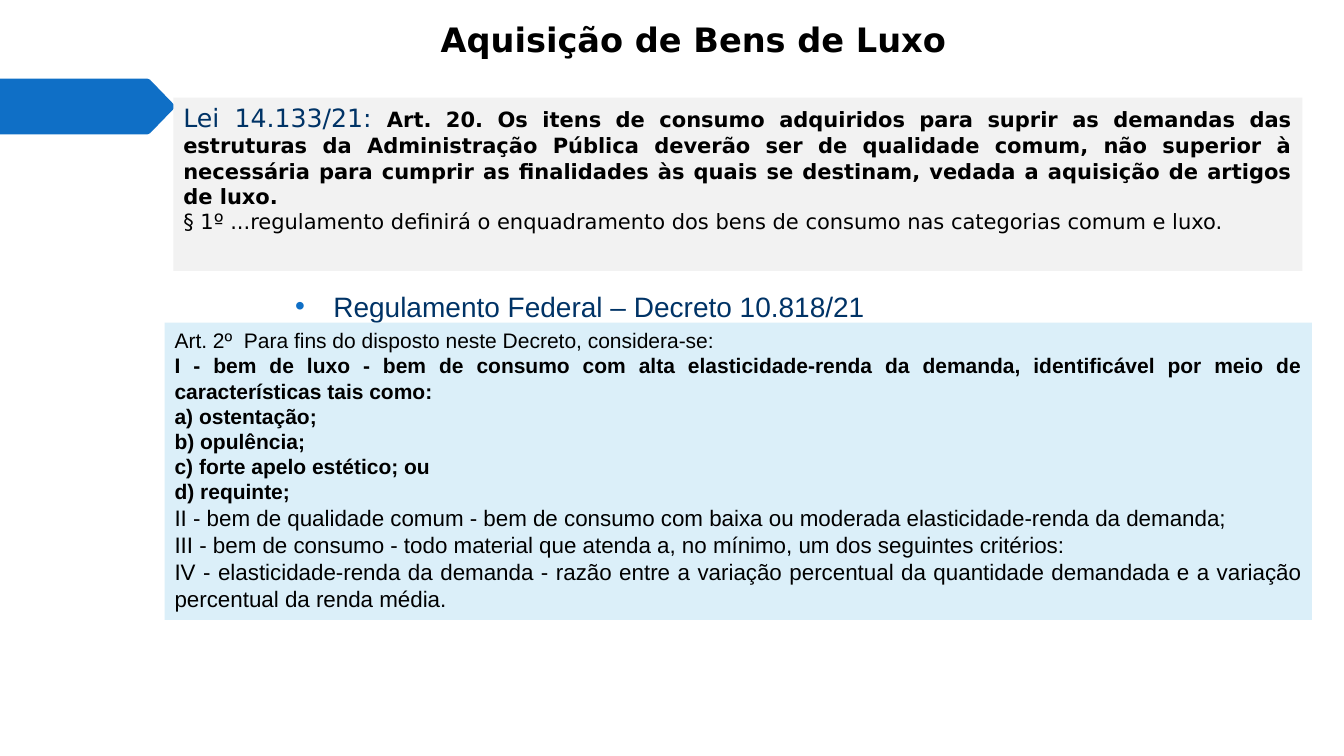
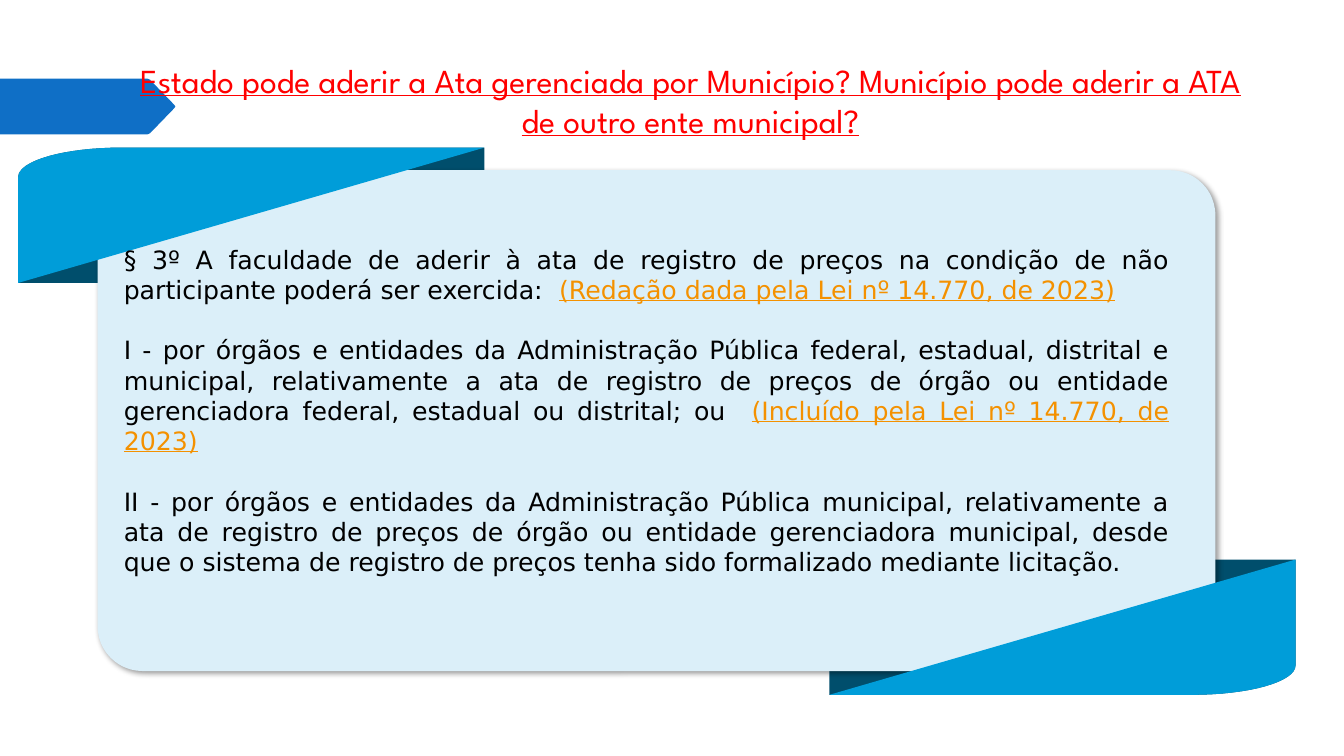
from math import cos, pi, sin

from lxml.etree import SubElement
from pptx import Presentation
from pptx.dml.color import RGBColor
from pptx.enum.shapes import MSO_SHAPE
from pptx.enum.text import MSO_ANCHOR, MSO_AUTO_SIZE, PP_ALIGN
from pptx.oxml.ns import qn
from pptx.util import Cm, Pt

# Shared look
SANS, ARIAL, SPARTAN = "DejaVu Sans", "Arial", "League Spartan"
BLACK, NAVY, RED, ORANGE = "000000", "003366", "FF0000", "F49100"
BLUE, SKY, DEEP = "0F6FC6", "009DD9", "004E6C"
PALE, GREY = "DBEFF9", "F2F2F2"


def color(code):
    return RGBColor.from_string(code)


def paint(shape, code):
    shape.fill.solid()
    shape.fill.fore_color.rgb = color(code)
    shape.line.fill.background()
    shape.shadow.inherit = False
    return shape


def place(shape, box):
    shape.left, shape.top, shape.width, shape.height = map(Cm, box)


# Text
def run(text, size, font=SANS, code=BLACK, bold=False, under=False):
    return text, size, font, code, bold, under


def write(shape, paras, align=PP_ALIGN.JUSTIFY, top=0.13, gap=0):
    """Fill a frame; each paragraph is a list of runs."""
    frame = shape.text_frame
    frame.word_wrap = True
    frame.auto_size = MSO_AUTO_SIZE.NONE
    frame.vertical_anchor = MSO_ANCHOR.TOP
    frame.margin_left = frame.margin_right = Cm(0.25)
    frame.margin_top, frame.margin_bottom = Cm(top), Cm(0.13)
    for i, runs in enumerate(paras):
        para = frame.add_paragraph() if i else frame.paragraphs[0]
        para.alignment = align
        para.space_before = Pt(gap if i else 0)
        for text, size, font, code, bold, under in runs:
            part = para.add_run()
            part.text = text
            face = part.font
            face.size, face.name = Pt(size), font
            face.bold, face.underline = bold, under
            face.color.rgb = color(code)
    return frame


def head(slide, box, part, top=0.13):
    title = slide.shapes.title
    place(title, box)
    write(title, [[part]], PP_ALIGN.CENTER, top)


def panel(slide, box, code, paras):
    shape = slide.shapes.add_shape(MSO_SHAPE.RECTANGLE, *map(Cm, box))
    write(paint(shape, code), paras)


def label(slide, box, paras, **style):
    return write(slide.shapes.add_textbox(*map(Cm, box)), paras, **style)


def bullet(para, code, indent):
    props = para._p.get_or_add_pPr()
    props.set("marL", str(Cm(indent)))
    props.set("indent", str(-Cm(indent)))
    tint = SubElement(props, qn("a:buClr"))
    SubElement(tint, qn("a:srgbClr")).set("val", code)
    SubElement(props, qn("a:buFont")).set("typeface", ARIAL)
    SubElement(props, qn("a:buChar")).set("char", "•")


# Outlines
def outline(slide, box, points, code, flip=False):
    """Draw points relative to a box, turned half round if flipped."""
    left, top, wide, high = box
    if flip:
        points = [(wide - x, high - y) for x, y in points]
    points = [(Cm(left + x), Cm(top + y)) for x, y in points]
    pen = slide.shapes.build_freeform(*points[0])
    pen.add_line_segments(points[1:], close=True)
    return paint(pen.convert_to_shape(), code)


def ribbon(slide, box, code, fold, flip):
    """A band with one round corner; the fold is its full dark back."""
    wide, high = box[2:]
    rx, ry = 2.6, 0.74
    steps = [i * pi / 32 for i in range(17)]
    curve = [(rx - rx * cos(a), ry - ry * sin(a)) for a in steps]
    corner = [(wide, 0), (wide, high)] if fold else [(wide, 0)]
    outline(slide, box, curve + corner + [(0, high)], code, flip)


def tag(slide, box):
    """Put the side arrow on the layout, behind its title."""
    wide, high = box[2:]
    half = [(0, 0), (wide - 0.71, 0), (wide - 0.64, 0.03),
            (wide - 0.03, 0.66)]
    points = half + [(wide, high / 2)] + [(x, high - y) for x, y in half[::-1]]
    arrow = outline(slide, box, points, BLUE)
    slide.slide_layout.shapes.element.insert(2, arrow.element)


def card(slide, box):
    shape = slide.shapes.add_shape(MSO_SHAPE.ROUNDED_RECTANGLE, *map(Cm, box))
    shape.adjustments[0] = 0.09
    paint(shape, PALE)
    effect = shape.element.spPr.find(qn("a:effectLst"))
    shade = SubElement(effect, qn("a:outerShdw"), blurRad=str(Pt(4)),
                       dist=str(Pt(3)), dir=str(45 * 60000), algn="tl",
                       rotWithShape="0")
    tint = SubElement(shade, qn("a:srgbClr"), val=BLACK)
    SubElement(tint, qn("a:alpha"), val="40000")


# Slides
def luxury(slide):
    head(slide, (2.87, 0, 29.21, 2.64),
         run("Aquisição de Bens de Luxo", 24, bold=True), top=0.48)

    # Law
    panel(slide, (4.37, 2.46, 28.45, 4.37), GREY, [
        [run("Lei 14.133/21: ", 18, code=NAVY),
         run("Art. 20. Os itens de consumo adquiridos para suprir as demandas "
             "das estruturas da Administração Pública deverão ser de qualidade "
             "comum, não superior à necessária para cumprir as finalidades às "
             "quais se destinam, vedada a aquisição de artigos de luxo.",
             15, bold=True)],
        [run("§ 1º ...regulamento definirá o enquadramento dos bens de "
             "consumo nas categorias comum e luxo.", 15)],
    ])

    # Decree
    frame = label(slide, (7.19, 7.16, 24.77, 1.1), [
        [run("Regulamento Federal – Decreto 10.818/21", 20, ARIAL, NAVY)],
    ], align=PP_ALIGN.LEFT)
    bullet(frame.paragraphs[0], BLUE, 0.96)

    bold = [
        "I - bem de luxo - bem de consumo com alta elasticidade-renda da "
        "demanda, identificável por meio de características tais como:",
        "a) ostentação;",
        "b) opulência;",
        "c) forte apelo estético; ou",
        "d) requinte;",
    ]
    plain = [
        "II - bem de qualidade comum - bem de consumo com baixa ou moderada "
        "elasticidade-renda da demanda;",
        "III - bem de consumo - todo material que atenda a, no mínimo, um dos "
        "seguintes critérios:",
        "IV - elasticidade-renda da demanda - razão entre a variação "
        "percentual da quantidade demandada e a variação percentual da renda "
        "média.",
    ]
    panel(slide, (4.15, 8.13, 28.91, 7.49), PALE, [
        [run("Art. 2º  Para fins do disposto neste Decreto, considera-se:",
             15, ARIAL)],
        *[[run(text, 15, ARIAL, bold=True)] for text in bold],
        *[[run(text, 16, ARIAL)] for text in plain],
    ])


def joining(slide):
    head(slide, (2.87, 1.37, 29.06, 3.3),
         run("Estado pode aderir a Ata gerenciada por Município? Município "
             "pode aderir a ATA de outro ente municipal?",
             24, SPARTAN, RED, under=True))

    # Card between the dark and light sides of its ribbons
    bands = [((0.46, 3.72, 11.75, 3.41), False),
             ((20.9, 14.1, 11.75, 3.41), True)]
    for box, flip in bands:
        ribbon(slide, box, DEEP, True, flip)
    card(slide, (2.46, 4.29, 28.17, 12.62))
    for box, flip in bands:
        ribbon(slide, box, SKY, False, flip)

    # Article
    def note(text):
        return run(text, 18, code=ORANGE, under=True)

    label(slide, (2.87, 5.26, 26.85, 10.26), [
        [run("§ 3º A faculdade de aderir à ata de registro de preços na "
             "condição de não participante poderá ser exercida:  ", 18),
         note("(Redação dada pela Lei nº 14.770, de 2023)")],
        [run("I - por órgãos e entidades da Administração Pública federal, "
             "estadual, distrital e municipal, relativamente a ata de "
             "registro de preços de órgão ou entidade gerenciadora federal, "
             "estadual ou distrital; ou  ", 18),
         note("(Incluído pela Lei nº 14.770, de 2023)")],
        [run("II - por órgãos e entidades da Administração Pública municipal, "
             "relativamente a ata de registro de preços de órgão ou entidade "
             "gerenciadora municipal, desde que o sistema de registro de "
             "preços tenha sido formalizado mediante licitação.", 18)],
    ], top=0.89, gap=21.6)


def main():
    deck = Presentation()
    deck.slide_width, deck.slide_height = Cm(33.87), Cm(19.05)
    layout = deck.slide_layouts[5]
    for holder in list(layout.placeholders):
        if holder.placeholder_format.idx:
            holder.element.getparent().remove(holder.element)
    first, second = [deck.slides.add_slide(layout) for _ in range(2)]
    tag(first, (0, 1.98, 4.42, 1.41))
    luxury(first)
    joining(second)
    deck.save("out.pptx")


if __name__ == "__main__":
    main()
